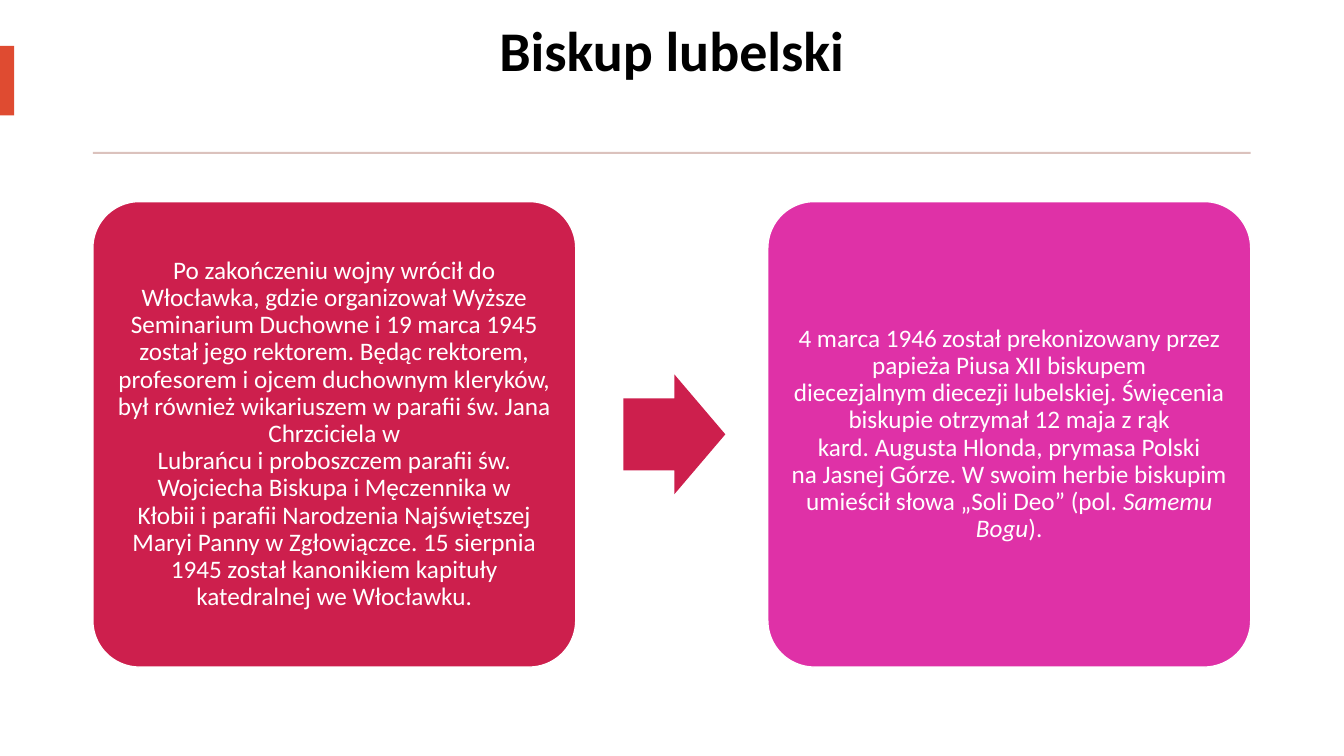
import dataclasses

import pptx
import pptx.dml.color
import pptx.enum.shapes
import pptx.enum.text
import pptx.util

Cm = pptx.util.Cm
Pt = pptx.util.Pt
Shapes = pptx.enum.shapes.MSO_SHAPE
Anchor = pptx.enum.text.MSO_ANCHOR


@dataclasses.dataclass(frozen=True)
class Theme:
    font: str = "Calibri"
    title_size: float = 40
    body_size: float = 18
    line_spacing: float = 0.9
    title: str = "000000"
    light: str = "FFFFFF"
    accent: str = "DF4B31"
    rule: str = "DBC2BD"
    crimson: str = "CD1F4D"
    magenta: str = "DF31A7"


@dataclasses.dataclass(frozen=True)
class Box:
    left: float
    top: float
    width: float
    height: float

    def lengths(self):
        return [Cm(value) for value in dataclasses.astuple(self)]


THEME = Theme()
TIE = "~"
HARD_SPACE = chr(160)
TITLE = "Biskup lubelski"
RECTOR = [
    ("Po zakończeniu wojny wrócił do Włocławka, gdzie organizował~Wyższe "
     "Seminarium Duchowne~i 19 marca 1945 został jego~rektorem. Będąc rektorem, "
     "profesorem i~ojcem duchownym~kleryków, był również wikariuszem w~parafii św. Jana "
     "Chrzciciela w Lubrańcu~i~proboszczem~parafii św. Wojciecha Biskupa i Męczennika w "
     "Kłobii~i~parafii Narodzenia Najświętszej Maryi Panny w Zgłowiączce. 15 sierpnia "
     "1945 został kanonikiem kapituły katedralnej we Włocławku.", False),
]
BISHOP = [
    ("4 marca 1946 został~prekonizowany~przez papieża~Piusa XII~biskupem "
     "diecezjalnym~diecezji lubelskiej.~Święcenia biskupie~otrzymał 12 maja z rąk "
     "kard.~Augusta Hlonda, prymasa Polski na~Jasnej Górze. W swoim~herbie~biskupim "
     "umieścił słowa „Soli Deo” (pol.~", False),
    ("Samemu Bogu", True),
    (").", False),
]


def rgb(color):
    return pptx.dml.color.RGBColor.from_string(color)


def add_filled_shape(slide, kind, box, color):
    shape = slide.shapes.add_shape(kind, *box.lengths())
    shape.shadow.inherit = False
    shape.fill.solid()
    shape.fill.fore_color.rgb = rgb(color)
    shape.line.fill.background()
    return shape


def write_text(shape, pieces, size, color, anchor, margin, bold=False):
    frame = shape.text_frame
    frame.word_wrap = True
    frame.vertical_anchor = anchor
    frame.margin_left = frame.margin_right = Cm(margin)
    frame.margin_top = frame.margin_bottom = Cm(margin)
    paragraph = frame.paragraphs[0]
    paragraph.alignment = pptx.enum.text.PP_ALIGN.CENTER
    paragraph.line_spacing = THEME.line_spacing
    for text, italic in pieces:
        run = paragraph.add_run()
        run.text = text.replace(TIE, HARD_SPACE)
        run.font.name = THEME.font
        run.font.size = Pt(size)
        run.font.color.rgb = rgb(color)
        run.font.bold = bold
        run.font.italic = italic


def add_header(slide, box):
    title = slide.shapes.add_textbox(
        *Box(box.left, box.top, box.width, 2.8).lengths())
    write_text(title, [(TITLE, False)], THEME.title_size, THEME.title,
               Anchor.TOP, 0, bold=True)
    add_filled_shape(slide, Shapes.RECTANGLE,
                     Box(0, box.top + 0.57, 0.36, 1.75), THEME.accent)
    add_filled_shape(slide, Shapes.RECTANGLE,
                     Box(box.left, box.top + box.height - 0.05, box.width, 0.05),
                     THEME.rule)


def add_card(slide, box, color, pieces):
    card = add_filled_shape(slide, Shapes.ROUNDED_RECTANGLE, box, color)
    card.adjustments[0] = 0.1
    card.line.color.rgb = rgb(THEME.light)
    card.line.width = Pt(1)
    write_text(card, pieces, THEME.body_size, THEME.light, Anchor.MIDDLE, 0.18)


def add_process(slide, box):
    card_width = 12.17
    arrow_width, arrow_height, arrow_gap = 2.57, 3.02, 1.2
    steps = [(THEME.crimson, RECTOR), (THEME.magenta, BISHOP)]
    pitch = (box.width - card_width) / (len(steps) - 1)
    for index, (color, pieces) in enumerate(steps):
        left = box.left + index * pitch
        add_card(slide, Box(left, box.top, card_width, box.height), color, pieces)
    arrow = add_filled_shape(
        slide, Shapes.RIGHT_ARROW,
        Box(box.left + card_width + arrow_gap,
            box.top + (box.height - arrow_height) / 2,
            arrow_width, arrow_height),
        THEME.crimson)
    arrow.adjustments[0] = 0.6
    arrow.adjustments[1] = 0.5


def main():
    presentation = pptx.Presentation()
    presentation.slide_width = Cm(33.87)
    presentation.slide_height = Cm(19.05)
    slide = presentation.slides.add_slide(presentation.slide_layouts[6])
    slide.background.fill.solid()
    slide.background.fill.fore_color.rgb = rgb(THEME.light)
    add_header(slide, Box(2.34, 0.59, 29.18, 3.29))
    add_process(slide, Box(2.34, 5.08, 29.18, 11.73))
    presentation.save("out.pptx")


if __name__ == "__main__":
    main()
